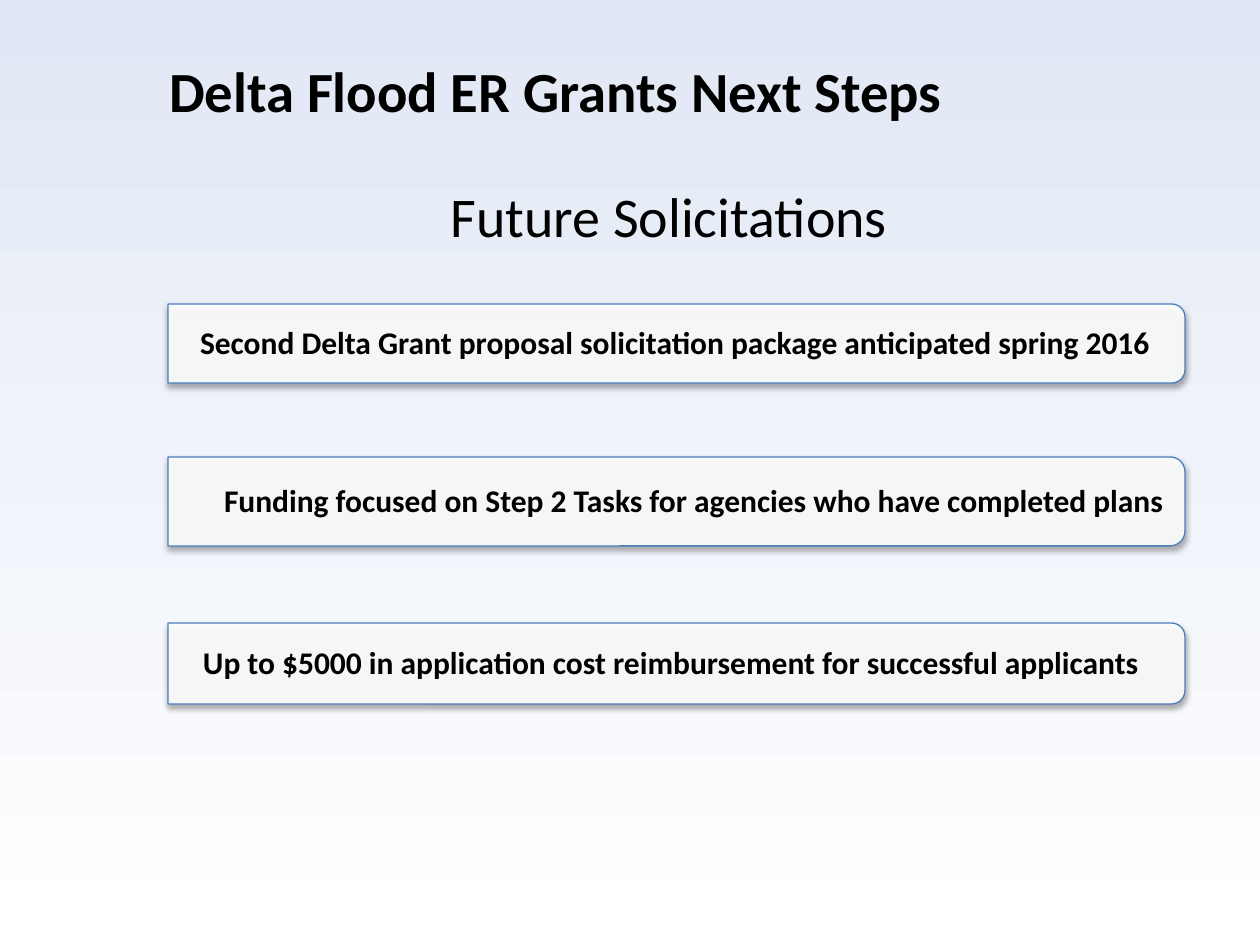
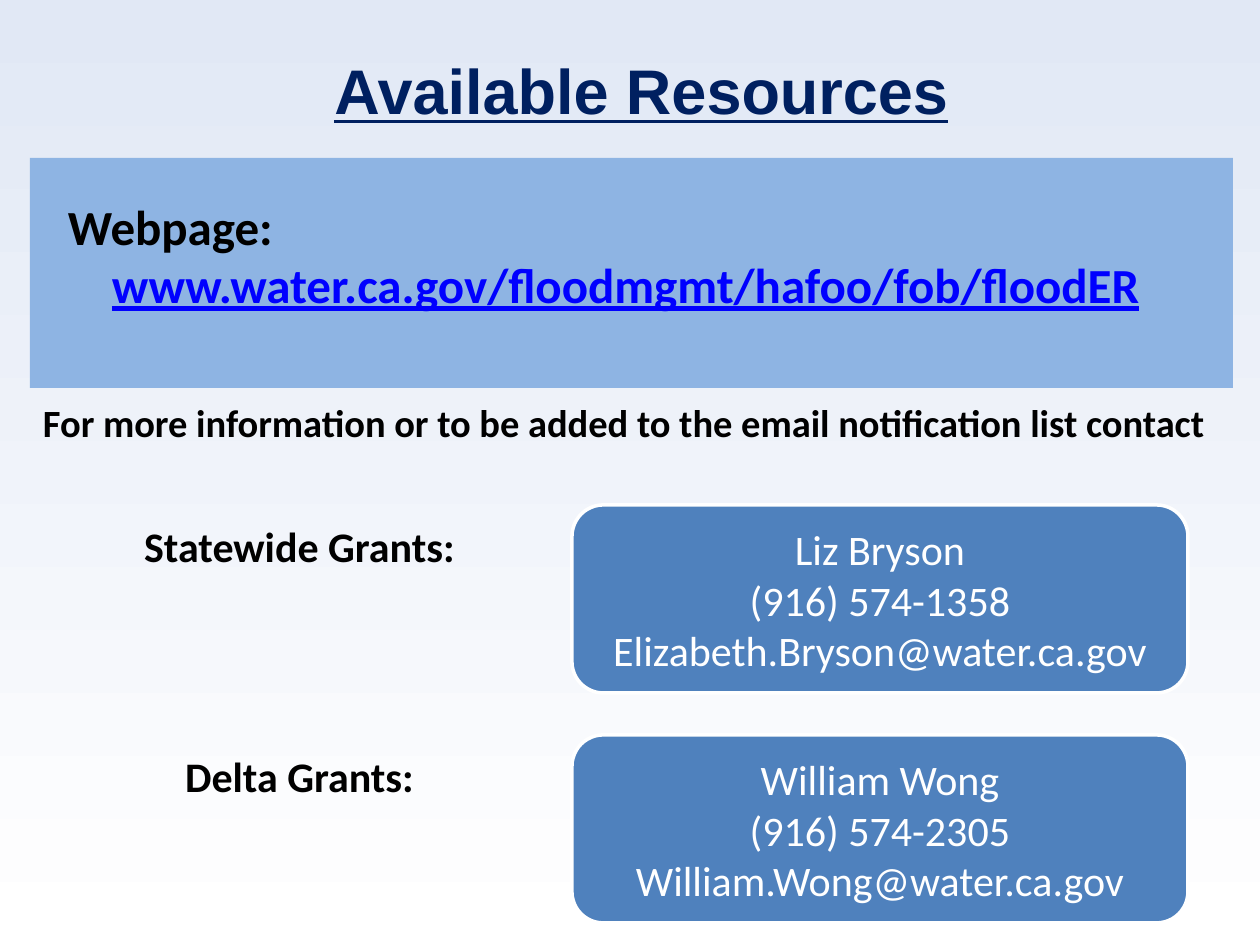
"""Build two slides on flood emergency response grants."""
import pptx
import pptx.dml.color
import pptx.enum.shapes
import pptx.enum.text
import pptx.oxml
import pptx.util

EMU_PER_PX = 914400 // 126
COLORS = {
    "sky": "E1E8F5",
    "white": "FFFFFF",
    "black": "000000",
    "navy": "002060",
    "link": "0000FF",
    "band": "8EB4E3",
    "card": "4F81BD",
    "outline": "4B7EBC",
}
SHAPE = pptx.enum.shapes.MSO_SHAPE
ALIGN = pptx.enum.text.PP_ALIGN
ANCHOR = pptx.enum.text.MSO_ANCHOR
NAMESPACE = "http://schemas.openxmlformats.org/drawingml/2006/main"
BAR_SHADOW = (
    f'<a:effectLst xmlns:a="{NAMESPACE}">'
    '<a:outerShdw blurRad="39370" dist="22860" dir="5400000" rotWithShape="0">'
    '<a:srgbClr val="000000"><a:alpha val="35000"/></a:srgbClr>'
    '</a:outerShdw></a:effectLst>'
)


def px(length):
    """Turn a length in px into EMU."""
    return pptx.util.Emu(length * EMU_PER_PX)


def rgb(name):
    """Look up a colour of the palette."""
    return pptx.dml.color.RGBColor.from_string(COLORS[name])


def add_slide(deck):
    """Add a blank slide with the shared vertical gradient."""
    slide = deck.slides.add_slide(deck.slide_layouts[6])
    fill = slide.background.fill
    fill.gradient()
    fill.gradient_angle = 270
    for stop, color, position in zip(fill.gradient_stops, ("sky", "white"), (0, 1)):
        stop.color.rgb = rgb(color)
        stop.position = position
    return slide


def add_text(slide, frame, lines, size, color="black", bold=True, font="Calibri",
             align=ALIGN.LEFT, anchor=ANCHOR.TOP, insets=(13, 6, 13, 6)):
    """Add a text box with one paragraph a line and return its paragraphs."""
    text = slide.shapes.add_textbox(*map(px, frame)).text_frame
    text.word_wrap = True
    text.vertical_anchor = anchor
    (text.margin_left, text.margin_top,
     text.margin_right, text.margin_bottom) = map(px, insets)
    text.text = "\n".join(lines)
    for paragraph in text.paragraphs:
        paragraph.alignment = align
        paragraph.font.name = font
        paragraph.font.size = pptx.util.Pt(size)
        paragraph.font.bold = bold
        paragraph.font.color.rgb = rgb(color)
    return text.paragraphs


def add_title(slide, left, title, size, **style):
    """Add the slide title and return its paragraph."""
    return add_text(slide, (left, 53, 1105, 73), [title], size,
                    anchor=ANCHOR.MIDDLE, **style)[0]


def add_panel(slide, preset, frame, fill, line=None, width=0):
    """Add a filled shape, outlined if a line colour is given."""
    panel = slide.shapes.add_shape(preset, *map(px, frame))
    panel.shadow.inherit = False
    panel.fill.solid()
    panel.fill.fore_color.rgb = rgb(fill)
    if line:
        panel.line.color.rgb = rgb(line)
        panel.line.width = pptx.util.Pt(width)
    else:
        panel.line.fill.background()
    return panel


def add_bar(slide, top, height):
    """Add a white bar, rounded on its right side, with a soft shadow."""
    left, length = 168, 1017
    upright = (left + (length - height) // 2, top + (height - length) // 2,
               height, length)
    bar = add_panel(slide, SHAPE.ROUND_2_SAME_RECTANGLE, upright,
                    "white", "outline", 0.75)
    bar.rotation = 90
    color = bar.fill._xPr.find(f".//{{{NAMESPACE}}}srgbClr")
    color.append(pptx.oxml.parse_xml(f'<a:alpha xmlns:a="{NAMESPACE}" val="90000"/>'))
    properties = bar._element.spPr
    properties.replace(properties.find(f"{{{NAMESPACE}}}effectLst"),
                       pptx.oxml.parse_xml(BAR_SHADOW))


def add_step(slide, top, height, text_left, step):
    """Add a bar with the text of one next step."""
    add_bar(slide, top, height)
    paragraph = add_text(slide, (text_left, top + 1, 992, height), [step], 18,
                         anchor=ANCHOR.MIDDLE, insets=(30, 3, 3, 3))[0]
    paragraph.line_spacing = 0.9


def add_contact(slide, top, program, details):
    """Add a grant program with the card of its contact person."""
    add_text(slide, (54, top + 9, 491, 63), [program], 24,
             align=ALIGN.CENTER, anchor=ANCHOR.MIDDLE)
    add_panel(slide, SHAPE.ROUNDED_RECTANGLE, (572, top, 616, 188), "card", "white", 2)
    add_text(slide, (574, top + 9, 612, 171), details, 24, "white", bold=False,
             align=ALIGN.CENTER, anchor=ANCHOR.MIDDLE, insets=(19, 19, 19, 19))


def build_next_steps(deck):
    """Build the slide on future solicitations."""
    slide = add_slide(deck)
    add_title(slide, 156, "Delta Flood ER Grants Next Steps", 32.4)
    add_text(slide, (111, 175, 1116, 80), ["Future Solicitations"], 32,
             bold=False, align=ALIGN.CENTER)
    steps = [
        (304, 79, 170,
         "Second Delta Grant proposal solicitation package anticipated spring 2016"),
        (457, 89, 194,
         "Funding focused on Step 2 Tasks for agencies who have completed plans"),
        (623, 81, 173,
         "Up to $5000 in application cost reimbursement for successful applicants"),
    ]
    for step in steps:
        add_step(slide, *step)


def build_resources(deck):
    """Build the slide on the web page and the contacts."""
    slide = add_slide(deck)
    add_panel(slide, SHAPE.RECTANGLE, (30, 158, 1203, 230), "band")
    add_text(slide, (30, 393, 1203, 136),
             ["For more information or to be added to the email notification list contact"],
             22)
    address = add_text(slide, (55, 190, 1149, 131),
                       ["Webpage:", "www.water.ca.gov/floodmgmt/hafoo/fob/floodER"], 28)[1]
    address.font.color.rgb = rgb("link")
    address.font.underline = True
    address._p.get_or_add_pPr().set("marL", str(px(44)))
    title = add_title(slide, 89, "Available Resources", 36, color="navy",
                      font="Arial", align=ALIGN.CENTER)
    title.font.underline = True
    add_contact(slide, 505, "Statewide Grants:",
                ["Liz Bryson", "(916) 574-1358", "Elizabeth.Bryson@water.ca.gov"])
    add_contact(slide, 735, "Delta Grants:",
                ["William Wong", "(916) 574-2305", "William.Wong@water.ca.gov"])


def main():
    """Build and save the deck."""
    deck = pptx.Presentation()
    deck.slide_width, deck.slide_height = px(1260), px(945)
    build_next_steps(deck)
    build_resources(deck)
    deck.save("out.pptx")


if __name__ == "__main__":
    main()
